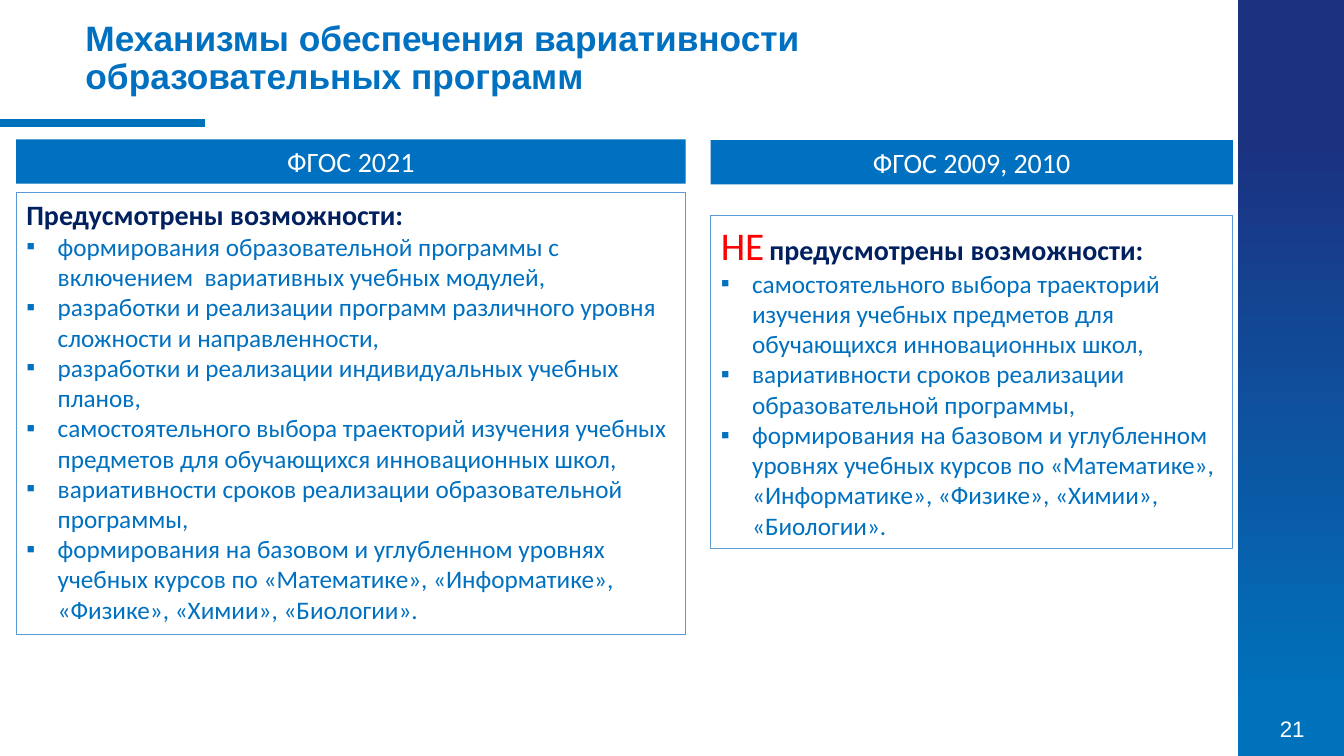
import pptx
import pptx.util
import pptx.dml.color
import pptx.enum.text
import pptx.enum.shapes
import lxml.etree

Cm = pptx.util.Cm
Pt = pptx.util.Pt
Text = pptx.enum.text
BLUE = "0070C0"
NAVY = "002060"
RED = "FF0000"
WHITE = "FFFFFF"


def paint(color, value):
    color.rgb = pptx.dml.color.RGBColor.from_string(value)


def write(para, words, size, value, bold=False, face="Calibri"):
    run = para.add_run()
    run.text = words
    run.font.name = face
    run.font.size = Pt(size)
    run.font.bold = bold
    paint(run.font.color, value)


show = pptx.Presentation()
show.slide_width = Cm(33.87)
show.slide_height = Cm(19.05)
slide = show.slides.add_slide(show.slide_layouts[3])
shapes = slide.shapes
rect = pptx.enum.shapes.MSO_SHAPE.RECTANGLE

side = shapes.add_shape(rect, Cm(31.19), 0, Cm(2.68), Cm(19.05))
side.shadow.inherit = False
side.line.fill.background()
side.fill.gradient()
side.fill.gradient_angle = 270
for stop, (place, value) in zip(side.fill.gradient_stops, [(0.18, "1B3281"), (0.94, "0072BC")]):
    stop.position = place
    paint(stop.color, value)

page = shapes.add_textbox(Cm(31.55), Cm(17.83), Cm(2.03), Cm(1.04)).text_frame
page.word_wrap = True
page.vertical_anchor = Text.MSO_ANCHOR.MIDDLE
page.paragraphs[0].alignment = Text.PP_ALIGN.CENTER
write(page.paragraphs[0], "21", 16, WHITE, face="Arial")

rule = shapes.add_connector(pptx.enum.shapes.MSO_CONNECTOR.STRAIGHT, 0, Cm(3.1), Cm(5.16), Cm(3.1))
rule.line.width = Pt(6)
paint(rule.line.color, "0072BC")
props = rule._element.spPr
lxml.etree.SubElement(props, pptx.oxml.ns.qn("a:effectLst"))

title = shapes.title
title.left, title.top, title.width, title.height = Cm(1.9), Cm(0.41), Cm(31.95), Cm(2.16)
title.text_frame.auto_size = Text.MSO_AUTO_SIZE.NONE
title.text_frame.vertical_anchor = Text.MSO_ANCHOR.MIDDLE
head = title.text_frame.paragraphs[0]
head.alignment = Text.PP_ALIGN.LEFT
head.line_spacing = 0.9
write(head, "Механизмы обеспечения вариативности ", 25.2, BLUE, True, "Arial")
head.add_line_break()
write(head, "образовательных программ", 25.2, BLUE, True, "Arial")

shared = [
    "самостоятельного выбора траекторий изучения учебных предметов для обучающихся инновационных школ,",
    "вариативности сроков реализации образовательной программы,",
    "формирования на базовом и углубленном уровнях учебных курсов по «Математике», «Информатике», «Физике», «Химии», «Биологии».",
]
fresh = [
    "формирования образовательной программы с включением  вариативных учебных модулей,",
    "разработки и реализации программ различного уровня сложности и направленности,",
    "разработки и реализации индивидуальных учебных планов,",
]
panels = [
    (1, "ФГОС 2021", 0.41, 16.87, 3.51, 4.85, 11.13,
     [("Предусмотрены возможности:", 20, NAVY, True)], fresh + shared),
    (2, "ФГОС 2009, 2010", 17.91, 13.16, 3.53, 5.44, 8.38,
     [("НЕ", 28, RED, False), (" ", 16, NAVY, True),
      ("предусмотрены возможности:", 20, NAVY, True)], shared),
]

for key, label, left, width, top, start, height, lead, items in panels:
    band = shapes.add_shape(rect, Cm(left), Cm(top), Cm(width), Cm(1.12))
    band.shadow.inherit = False
    band.fill.solid()
    paint(band.fill.fore_color, BLUE)
    band.line.fill.background()
    band.text_frame.word_wrap = True
    band.text_frame.vertical_anchor = Text.MSO_ANCHOR.TOP
    para = band.text_frame.paragraphs[0]
    para.alignment = Text.PP_ALIGN.CENTER
    write(para, label, 20, WHITE)

    body = slide.placeholders[key]
    body.left, body.top, body.width, body.height = Cm(left), Cm(start), Cm(width), Cm(height)
    body.line.width = Pt(0.75)
    paint(body.line.color, "5B9BD5")
    frame = body.text_frame
    frame.auto_size = Text.MSO_AUTO_SIZE.NONE
    frame.vertical_anchor = Text.MSO_ANCHOR.TOP
    rows = [lead] + [[(item, 18, BLUE, False)] for item in items]
    for index, row in enumerate(rows):
        para = frame.add_paragraph() if index else frame.paragraphs[0]
        props = para._p.get_or_add_pPr()
        indent = Cm(0.79) if index else 0
        props.set("marL", str(indent))
        props.set("indent", str(-indent))
        if index:
            font = lxml.etree.SubElement(props, pptx.oxml.ns.qn("a:buFont"))
            font.set("typeface", "Arial")
            mark = lxml.etree.SubElement(props, pptx.oxml.ns.qn("a:buChar"))
            mark.set("char", "▪")
        else:
            lxml.etree.SubElement(props, pptx.oxml.ns.qn("a:buNone"))
        para.space_before = Pt(0)
        for words, size, value, bold in row:
            write(para, words, size, value, bold)

show.save("out.pptx")
